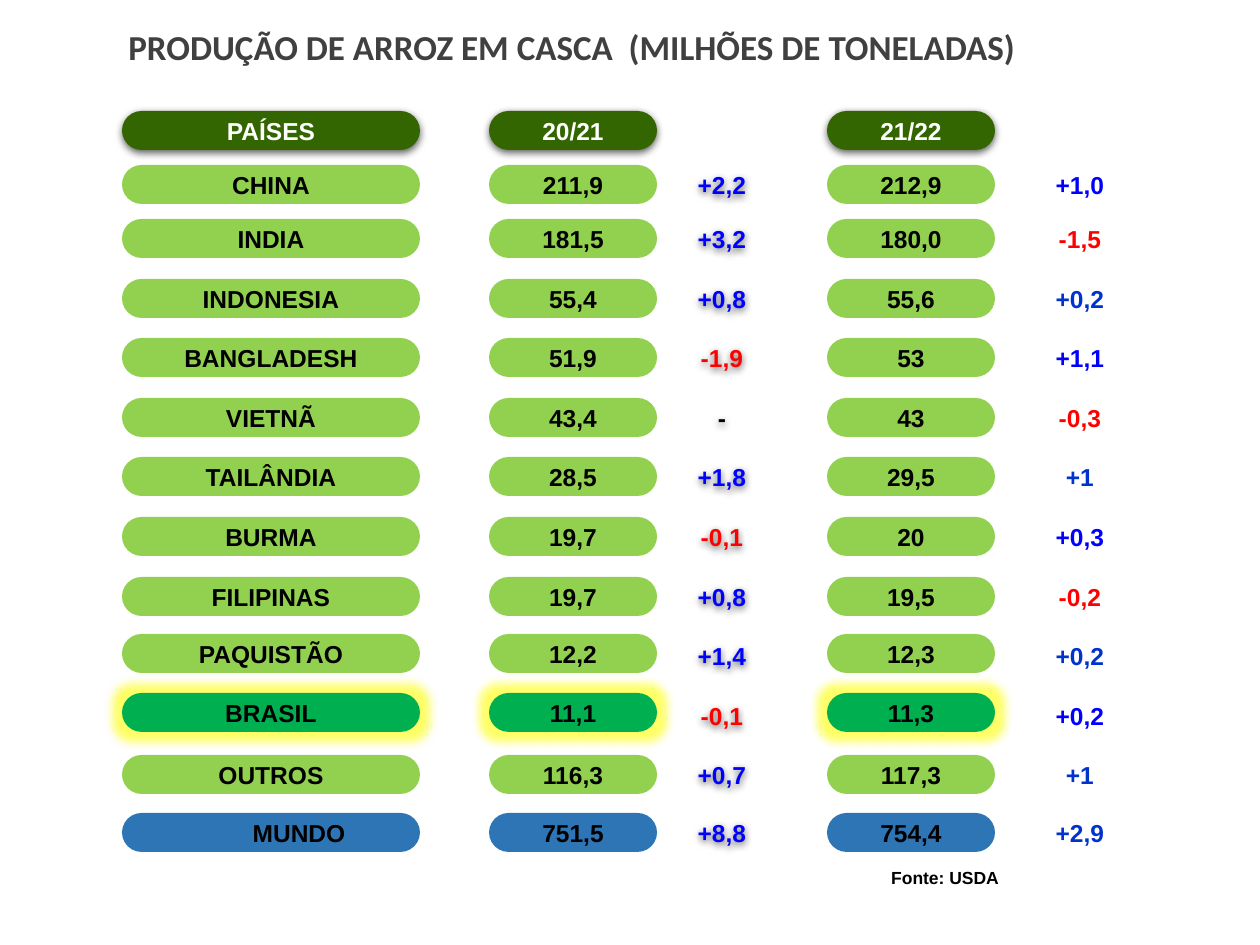
import pptx
import pptx.dml.color
import pptx.enum.shapes
import pptx.enum.text
import pptx.oxml
import pptx.oxml.ns
import pptx.util

PX = 914400 / 126
PILL_H = 39
COUNTRY, PREVIOUS, PREVIOUS_DIFF, CURRENT, CURRENT_DIFF = (
    (122, 298), (489, 168), (658, 128), (827, 168), (1016, 128))
DARK, LIME, GREEN, STEEL = "336600", "92D050", "00B050", "2E75B6"
BLACK, WHITE, RED, BLUE, NAVY = "000000", "FFFFFF", "FF0000", "0000FF", "0033CC"
SHADOW = ('<a:outerShdw blurRad="57150" dist="19050" dir="5400000" algn="ctr" rotWithShape="0">'
          '<a:srgbClr val="000000"><a:alpha val="63000"/></a:srgbClr></a:outerShdw>')
GLOW = '<a:glow rad="139700"><a:srgbClr val="FFFF00"><a:alpha val="60000"/></a:srgbClr></a:glow>'

HEADERS = [(COUNTRY, "PAÍSES"), (PREVIOUS, "20/21"), (CURRENT, "21/22")]
HEADER_TOP = 111
ROWS = [
    (165, 165, "CHINA", "211,9", "+2,2", "212,9", "+1,0", BLUE),
    (219, 219, "INDIA", "181,5", "+3,2", "180,0", "-1,5", RED),
    (279, 279, "INDONESIA", "55,4", "+0,8", "55,6", "+0,2", NAVY),
    (338, 338, "BANGLADESH", "51,9", "-1,9", "53", "+1,1", BLUE),
    (398, 398, "VIETNÃ", "43,4", "-", "43", "-0,3", RED),
    (457, 457, "TAILÂNDIA", "28,5", "+1,8", "29,5", "+1", NAVY),
    (517, 517, "BURMA", "19,7", "-0,1", "20", "+0,3", BLUE),
    (577, 577, "FILIPINAS", "19,7", "+0,8", "19,5", "-0,2", RED),
    (634, 636, "PAQUISTÃO", "12,2", "+1,4", "12,3", "+0,2", NAVY),
    (693, 696, "BRASIL", "11,1", "-0,1", "11,3", "+0,2", BLUE),
    (755, 755, "OUTROS", "116,3", "+0,7", "117,3", "+1", NAVY),
    (813, 813, "MUNDO ", "751,5", "+8,8", "754,4", "+2,9", NAVY),
]
ROW_FILLS = {"BRASIL": GREEN, "MUNDO ": STEEL}


def px(n):
    return pptx.util.Emu(round(n * PX))


def rgb(value):
    return pptx.dml.color.RGBColor.from_string(value)


def write(sp, text, size, font, color, indented=False):
    p = sp.text_frame.paragraphs[0]
    p.text = text
    p.alignment = pptx.enum.text.PP_ALIGN.CENTER
    if indented:
        p.level = 1
        pPr = p._p.get_or_add_pPr()
        pPr.set("marL", str(px(63)))
        pPr.set("indent", "0")
    p.font.size = pptx.util.Pt(size)
    p.font.name = font
    p.font.bold = True
    p.font.color.rgb = rgb(color)


def add_effect(sp, effect):
    xml = f'<a:effectLst {pptx.oxml.ns.nsdecls("a")}>{effect}</a:effectLst>'
    sp._element.spPr.append(pptx.oxml.parse_xml(xml))


def add_pill(slide, column, top, text, fill=None, color=BLACK, effect="", indented=False):
    left, width = column
    sp = slide.shapes.add_shape(pptx.enum.shapes.MSO_SHAPE.ROUNDED_RECTANGLE,
                                px(left), px(top), px(width), px(PILL_H))
    sp.adjustments[0] = 0.5
    if fill:
        sp.fill.solid()
        sp.fill.fore_color.rgb = rgb(fill)
    else:
        sp.fill.background()
    sp.line.fill.background()
    add_effect(sp, effect)
    sp.text_frame.word_wrap = False
    sp.text_frame.vertical_anchor = pptx.enum.text.MSO_ANCHOR.MIDDLE
    write(sp, text, 14, "Arial", color, indented)


def add_row(slide, top, diff_top, country, previous, previous_diff, current, current_diff, diff_color):
    fill = ROW_FILLS.get(country, LIME)
    effect = GLOW if country == "BRASIL" else ""
    add_pill(slide, COUNTRY, top, country, fill, effect=effect, indented=country == "MUNDO ")
    add_pill(slide, PREVIOUS, top, previous, fill, effect=effect)
    add_pill(slide, CURRENT, top, current, fill, effect=effect)
    previous_color = {"+": BLUE, "-": RED}[previous_diff[0]] if len(previous_diff) > 1 else BLACK
    add_pill(slide, PREVIOUS_DIFF, diff_top, previous_diff, color=previous_color, effect=SHADOW)
    add_pill(slide, CURRENT_DIFF, diff_top, current_diff, color=diff_color)


def set_title(slide, text):
    sp = slide.shapes.title
    sp.left, sp.top, sp.width, sp.height = px(44), px(20), px(993), px(53)
    tf = sp.text_frame
    tf.auto_size = pptx.enum.text.MSO_AUTO_SIZE.NONE
    tf.vertical_anchor = pptx.enum.text.MSO_ANCHOR.MIDDLE
    write(sp, text, 20, "Calibri", "404040", indented=True)


def add_source(slide, text):
    sp = slide.shapes.add_textbox(px(831), px(861), px(228), px(40))
    sp.text_frame.word_wrap = True
    write(sp, text, 10, "Arial", BLACK)


def main():
    prs = pptx.Presentation()
    prs.slide_width, prs.slide_height = px(1260), px(945)
    slide = prs.slides.add_slide(prs.slide_layouts[5])
    set_title(slide, "PRODUÇÃO DE ARROZ EM CASCA  (MILHÕES DE TONELADAS)")
    add_source(slide, "Fonte: USDA")
    for column, text in HEADERS:
        add_pill(slide, column, HEADER_TOP, text, DARK, WHITE, SHADOW)
    for row in ROWS:
        add_row(slide, *row)
    prs.save("out.pptx")


if __name__ == "__main__":
    main()
